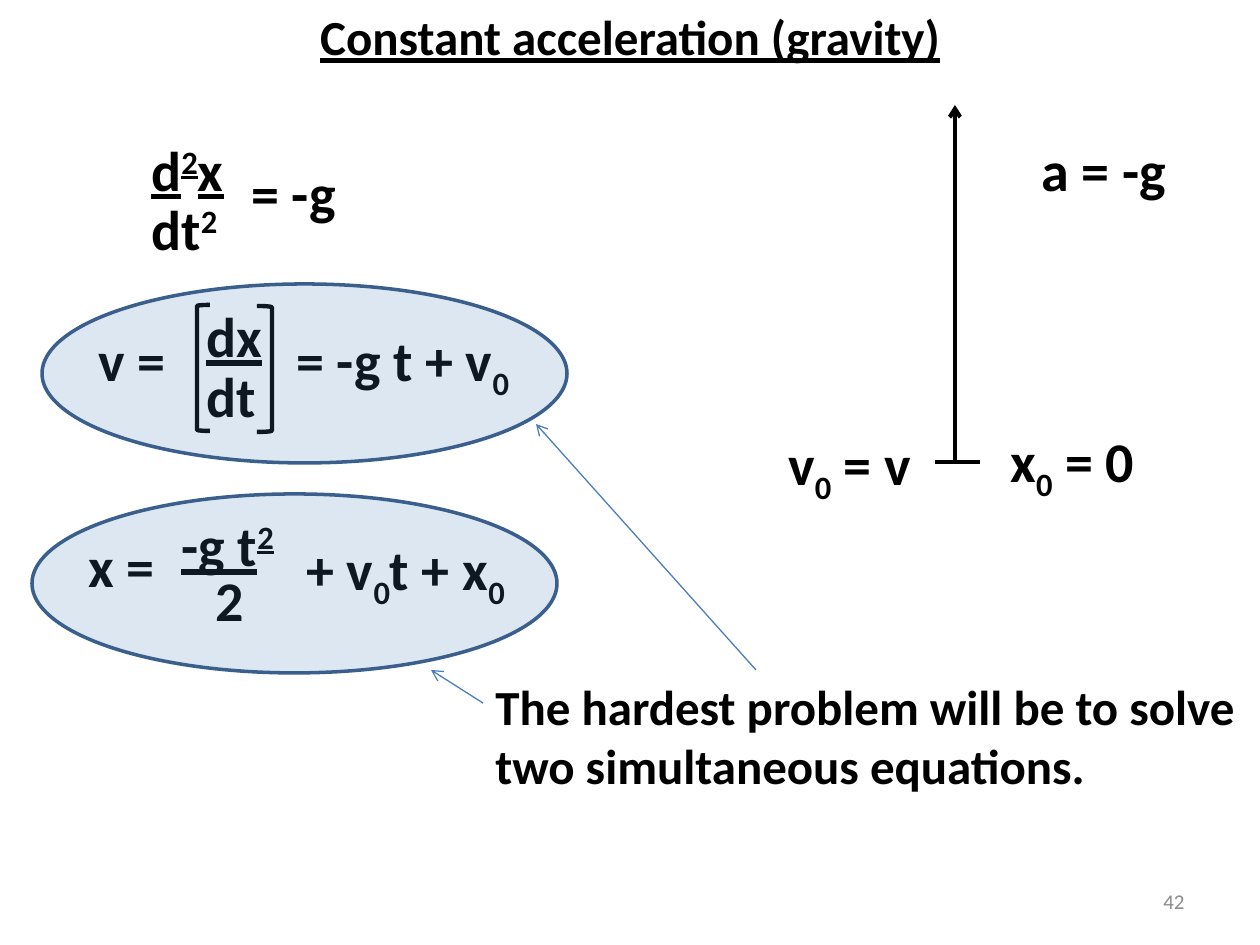
from dataclasses import dataclass

from pptx import Presentation
from pptx import util as u
from pptx.dml.color import RGBColor
from pptx.enum import shapes, text
from pptx.oxml.ns import qn
from lxml import etree

PX = 914400 / 126
LINE_HEIGHT = 81


@dataclass(frozen=True)
class Theme:
    font: str = "Calibri"
    ink: str = "000000"
    muted: str = "8C8C8C"
    accent: str = "4F81BD"
    outline: str = "3A5F8C"
    pointer: str = "4B7EBC"
    formula: int = 32
    heading: int = 28
    small: int = 12


THEME = Theme()
BASELINES = {"^": 30000, "_": -25000}


def px(*lengths):
    return [u.Emu(round(length * PX)) for length in lengths]


def color(value):
    return RGBColor.from_string(value)


def split_scripts(content):
    """Yield (text, baseline); ^ raises and _ lowers the next character."""
    plain = ""
    letters = iter(content)
    for letter in letters:
        if letter in BASELINES:
            if plain:
                yield plain, 0
            yield next(letters), BASELINES[letter]
            plain = ""
        else:
            plain += letter
    if plain:
        yield plain, 0


def write(box, content, size=THEME.formula, ink=THEME.ink, bold=True,
          underline=False, align=text.PP_ALIGN.LEFT,
          anchor=text.MSO_ANCHOR.TOP, wrap=True):
    frame = box.text_frame
    frame.word_wrap = wrap
    frame.vertical_anchor = anchor
    para = frame.paragraphs[0]
    para.alignment = align
    for words, baseline in split_scripts(content):
        span = para.add_run()
        span.text = words
        font = span.font
        font.name, font.size, font.bold = THEME.font, u.Pt(size), bold
        font.underline = underline
        font.color.rgb = color(ink)
        if baseline:
            span._r.get_or_add_rPr().set("baseline", str(baseline))


def add_title(page, content):
    title = page.shapes.title
    title.left, title.top, title.width, title.height = px(0, 0, 1260, 72)
    write(title, content, size=THEME.heading, underline=True,
          align=text.PP_ALIGN.CENTER)
    title.text_frame.auto_size = text.MSO_AUTO_SIZE.NONE


def add_text(page, content, left, top, width, height, **style):
    box = page.shapes.add_textbox(*px(left, top, width, height))
    write(box, content, **style)


def add_formula(page, content, left, top, width, underline=False):
    add_text(page, content, left, top, width, LINE_HEIGHT,
             underline=underline, wrap=False)


def add_outline(page, kind, left, top, width, height, line, weight):
    shape = page.shapes.add_shape(kind, *px(left, top, width, height))
    shape.shadow.inherit = False
    shape.fill.background()
    shape.line.color.rgb = color(line)
    shape.line.width = u.Pt(weight)
    return shape


def add_highlight(page, left, top):
    oval = add_outline(page, shapes.MSO_SHAPE.OVAL, left, top, 525, 179,
                       THEME.outline, 2)
    oval.fill.solid()
    oval.fill.fore_color.rgb = color(THEME.accent)
    tint = oval._element.spPr.find(qn("a:solidFill"))[0]
    etree.SubElement(tint, qn("a:alpha"), val="19000")


def add_line(page, start, end, ink=THEME.ink, weight=2.25, arrow=False):
    line = page.shapes.add_connector(shapes.MSO_CONNECTOR.STRAIGHT,
                                     *px(*start, *end))
    line.line.color.rgb = color(ink)
    line.line.width = u.Pt(weight)
    if arrow:
        etree.SubElement(line.line._get_or_add_ln(), qn("a:tailEnd"),
                         type="arrow")
    etree.SubElement(line._element.spPr, qn("a:effectLst"))


def add_acceleration(page):
    add_formula(page, "= -g", 239, 152, 111)
    add_formula(page, "d^2x", 139, 129, 101, underline=True)
    add_formula(page, "dt^2", 139, 188, 95)


def add_velocity(page):
    add_formula(page, "v =", 86, 319, 95)
    add_formula(page, "dx", 194, 295, 82, underline=True)
    add_formula(page, "dt", 194, 355, 76)
    add_outline(page, shapes.MSO_SHAPE.LEFT_BRACKET, 197, 305, 13, 126,
                THEME.ink, 2.5)
    add_outline(page, shapes.MSO_SHAPE.RIGHT_BRACKET, 257, 306, 15, 126,
                THEME.ink, 2.5)
    add_formula(page, "= -g t + v_0", 284, 319, 252)
    add_highlight(page, 42, 284)


def add_position(page):
    add_formula(page, "x =", 76, 525, 106)
    add_formula(page, "-g t^2", 169, 504, 121, underline=True)
    add_formula(page, "2", 203, 559, 54)
    add_formula(page, "+ v_0t + x_0", 294, 528, 232)
    add_highlight(page, 32, 494)


def add_axis(page):
    add_line(page, (955, 462), (955, 105), arrow=True)
    add_line(page, (935, 462), (980, 462))
    add_formula(page, "a = -g", 1029, 129, 151)
    add_formula(page, "v_0 = v", 776, 423, 152)
    add_formula(page, "x_0 = 0", 998, 420, 152)


def add_remark(page):
    add_text(page, "The hardest problem will be to solve "
             "two simultaneous equations.", 483, 670, 766, 131,
             size=THEME.heading)
    for start, end in (((756, 670), (536, 424)), ((483, 703), (431, 670))):
        add_line(page, start, end, THEME.pointer, 0.75, arrow=True)


def main():
    deck = Presentation()
    deck.slide_width, deck.slide_height = px(1260, 945)
    page = deck.slides.add_slide(deck.slide_layouts.get_by_name("Title Only"))
    add_title(page, "Constant acceleration (gravity)")
    add_acceleration(page)
    add_velocity(page)
    add_position(page)
    add_axis(page)
    add_remark(page)
    add_text(page, "42", 903, 876, 294, 50, size=THEME.small,
             ink=THEME.muted, bold=False, align=text.PP_ALIGN.RIGHT,
             anchor=text.MSO_ANCHOR.MIDDLE)
    deck.save("out.pptx")


if __name__ == "__main__":
    main()
